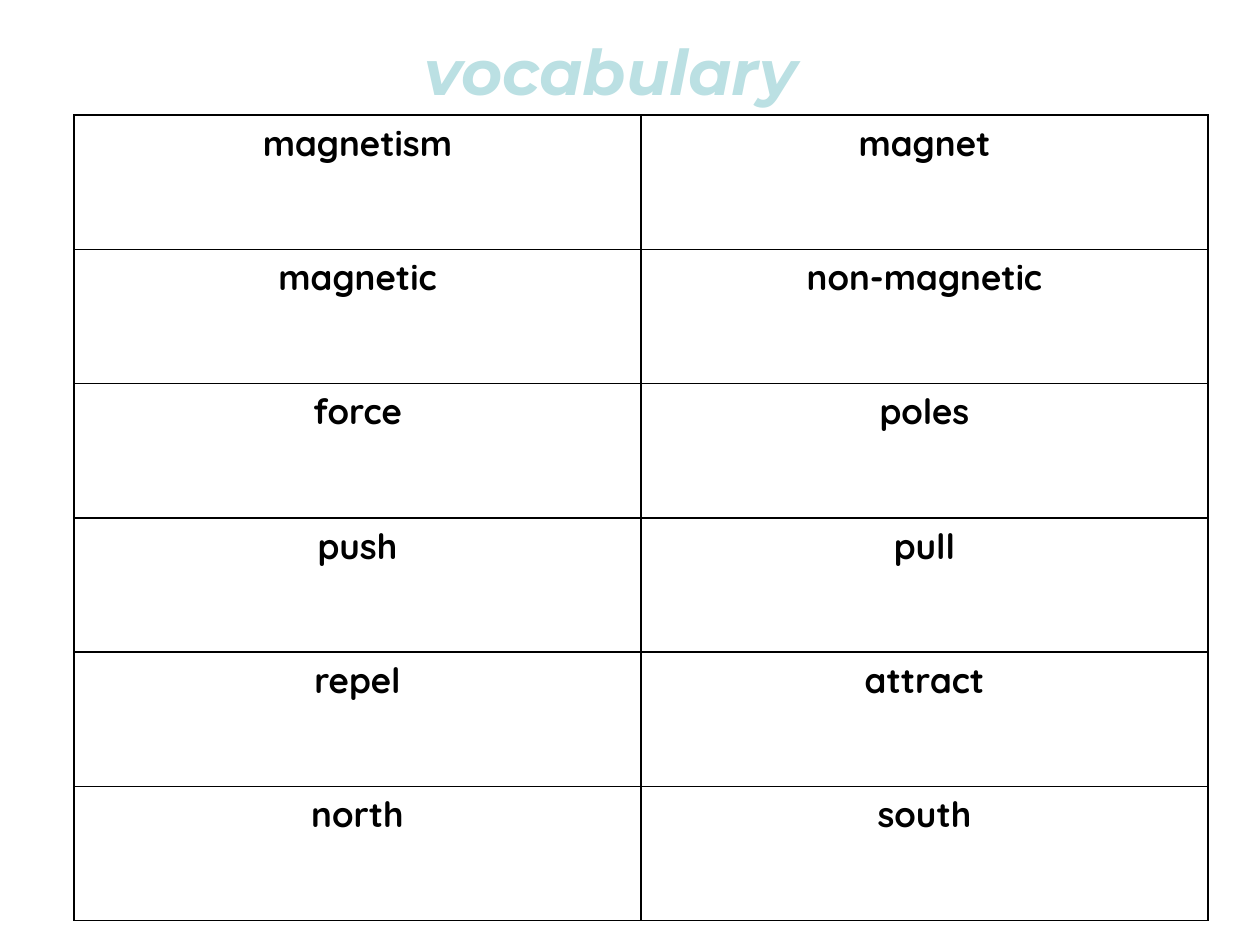
import pptx
import pptx.util
import pptx.dml.color
import pptx.enum.text
import pptx.oxml

TITLE = "vocabulary"
WORDS = [
    ("magnetism", "magnet"),
    ("magnetic", "non-magnetic"),
    ("force", "poles"),
    ("push", "pull"),
    ("repel", "attract"),
    ("north", "south"),
]
HEAD = (333, 26, 556, 86)
GRID = (74, 115, 1134, 806)
NS = 'xmlns:a="http://schemas.openxmlformats.org/drawingml/2006/main"'


def px(n):
    return pptx.util.Emu(round(n * 914400 / 126))


def write(frame, text, font, size, color, italic=False):
    frame.text = text
    para = frame.paragraphs[0]
    para.alignment = pptx.enum.text.PP_ALIGN.CENTER
    face = para.runs[0].font
    face.name = font
    face.size = pptx.util.Pt(size)
    face.bold = True
    face.italic = italic
    face.color.rgb = pptx.dml.color.RGBColor.from_string(color)


def border(cell, color):
    props = cell._tc.get_or_add_tcPr()
    for i, side in enumerate(("lnL", "lnR", "lnT", "lnB")):
        props.insert(i, pptx.oxml.parse_xml(
            f'<a:{side} {NS} w="12700"><a:solidFill><a:srgbClr val="{color}"/>'
            f'</a:solidFill></a:{side}>'))


def main():
    deck = pptx.Presentation()
    deck.slide_width, deck.slide_height = px(1260), px(945)
    slide = deck.slides.add_slide(deck.slide_layouts[6])

    head = slide.shapes.add_textbox(*map(px, HEAD)).text_frame
    head.word_wrap = False
    write(head, TITLE, "Montserrat", 36, "BBE0E3", italic=True)

    table = slide.shapes.add_table(len(WORDS), 2, *map(px, GRID)).table
    table.first_row = table.horz_banding = False
    for row, pair in zip(table.rows, WORDS):
        row.height = px(GRID[3] / len(WORDS))
        for cell, word in zip(row.cells, pair):
            cell.fill.background()
            border(cell, "000000")
            write(cell.text_frame, word, "Quicksand", 20, "000000")

    deck.save("out.pptx")


if __name__ == "__main__":
    main()
